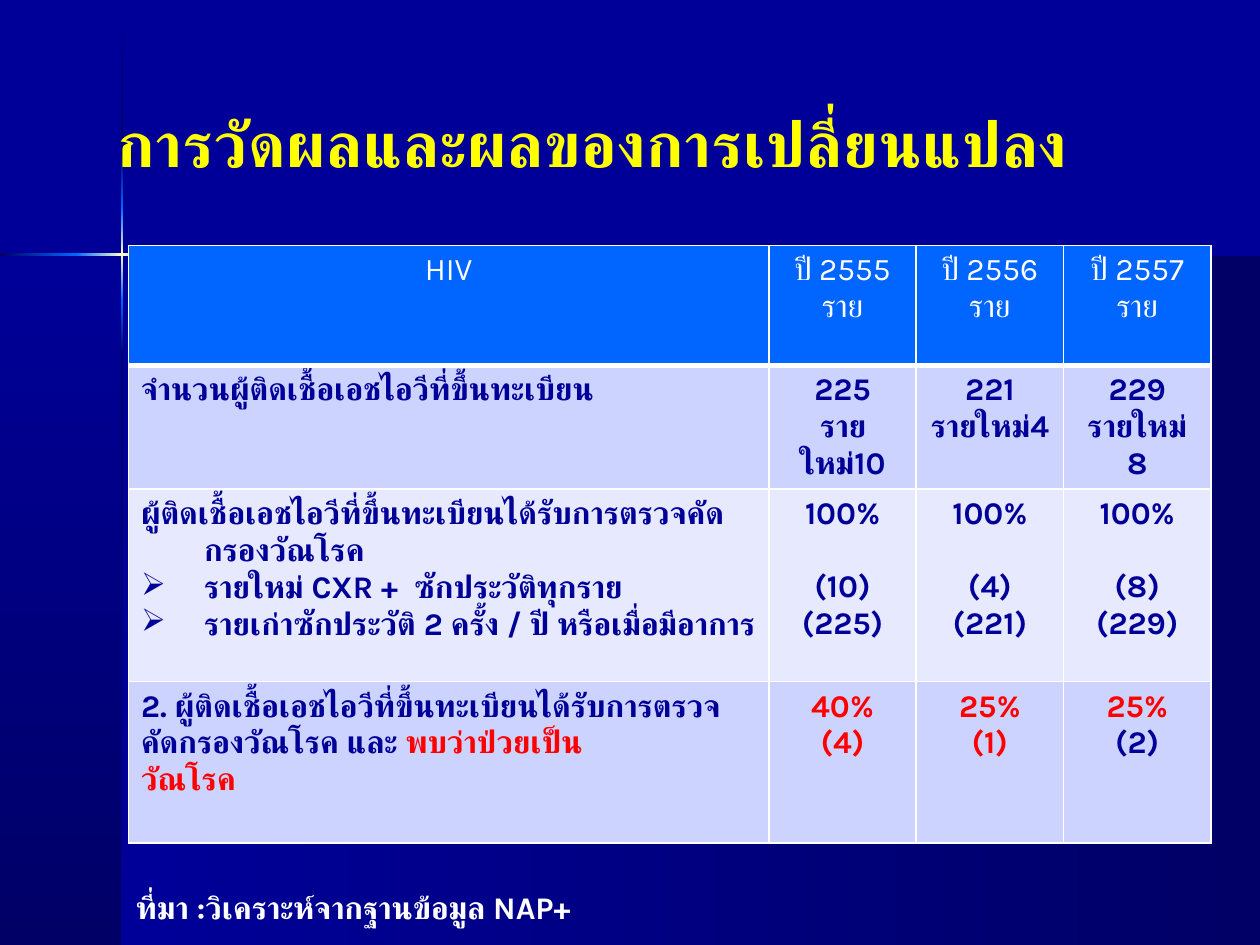
from copy import deepcopy
from dataclasses import dataclass

from lxml import etree
from pptx import Presentation
from pptx.dml.color import RGBColor
from pptx.enum import shapes, text
from pptx.oxml import ns
from pptx.util import Pt


@dataclass(frozen=True)
class Theme:
    font: str = "Karla"
    navy: str = "000099"
    dark: str = "000066"
    blue: str = "0066FF"
    glow: str = "FFFFCC"
    white: str = "FFFFFF"
    gold: str = "FFFF00"
    red: str = "FF0000"
    band: str = "CCD3FF"
    pale: str = "E7EAFF"
    big: int = 36
    base: int = 18


T = Theme()


@dataclass
class Para:
    text: str
    color: str = T.navy
    tail: str = ""  # red ending of the line
    hang: bool = False
    mark: str = ""
    after: float = 0


def rgb(code):
    return RGBColor.from_string(code)


def child(node, tag, **attrs):
    return etree.SubElement(node, ns.qn(tag), attrs)


def style(run, color, size=T.base, bold=True):
    """Set the font for both Latin and Thai letters."""
    font = run.font
    font.name, font.size, font.bold = T.font, Pt(size), bold
    font.color.rgb = rgb(color)
    child(run._r.get_or_add_rPr(), "a:cs", typeface=T.font)


def panel(slide, box, colors, down=False):
    """Draw a borderless box with evenly spaced gradient colours."""
    shape = slide.shapes.add_shape(shapes.MSO_SHAPE.RECTANGLE, *map(Pt, box))
    shape.shadow.inherit = False
    shape.line.fill.background()
    fill = shape.fill
    fill.gradient()
    fill.gradient_angle = 270 if down else 0
    stops = shape._element.spPr.find(".//" + ns.qn("a:gsLst"))
    for _ in colors[2:]:
        stops.append(deepcopy(stops[0]))
    for i, (stop, color) in enumerate(zip(fill.gradient_stops, colors)):
        stop.color.rgb = rgb(color)
        stop.position = i / (len(colors) - 1)


def backdrop(slide):
    fill = slide.background.fill
    fill.solid()
    fill.fore_color.rgb = rgb(T.navy)
    fade = [T.navy, T.dark]
    panel(slide, (70, 145.5, 650, 394.5), fade)
    panel(slide, (0, 145.5, 70, 394.5), fade, True)

    rise, fall = [T.dark, T.blue], [T.blue, T.dark]
    shine = [T.blue, T.glow, T.blue]
    beams = [(0.7, 87, fade), (203, 337, fade[::-1]), (171.4, 31.6, fall),
             (87, 31.8, rise), (118.8, 52.6, shine)]
    for top, high, colors in beams:
        panel(slide, (69.2, top, 1.4, high), colors, True)
    rays = [(127.4, 592.6, fade[::-1]), (0, 43.6, rise),
            (95.8, 31.6, fall), (43.4, 52.4, shine)]
    for left, wide, colors in rays:
        panel(slide, (left, 144.8, wide, 1.4), colors)


def heading(slide, words):
    title = slide.shapes.title
    title.left, title.top, title.width, title.height = map(Pt, (60, 56, 646, 51))
    title.text_frame.text = words
    para = title.text_frame.paragraphs[0]
    para.alignment = text.PP_ALIGN.LEFT
    style(para.runs[0], T.gold, T.big)
    para.runs[0]._r.get_or_add_rPr().set("spc", "50")
    slide.shapes._spTree.append(title._element)


def source(slide, words):
    box = slide.shapes.add_textbox(*map(Pt, (70.6, 504, 360, 29)))
    frame = box.text_frame
    frame.word_wrap = True
    frame.text = words
    style(frame.paragraphs[0].runs[0], T.white)


def border(cell, head):
    props = cell._tc.get_or_add_tcPr()
    for side in "LRTB":
        width = Pt(3 if head and side == "B" else 1)
        line = child(props, f"a:ln{side}", w=str(width))
        child(child(line, "a:solidFill"), "a:srgbClr", val=T.white)


def write(cell, paras, center, bold):
    frame = cell.text_frame
    frame.text = "\n".join(p.text for p in paras)
    for para, item in zip(frame.paragraphs, paras):
        if center:
            para.alignment = text.PP_ALIGN.CENTER
        if item.after:
            para.space_after = Pt(item.after)
        props = para._p.get_or_add_pPr()
        if item.hang:
            props.set("marL", str(Pt(36)))
            props.set("indent", str(Pt(-36)))
        if item.mark:
            child(props, "a:buChar", char=item.mark)
        for run in para.runs:
            style(run, item.color, bold=bold)
        if item.tail:
            run = para.add_run()
            run.text = item.tail
            style(run, T.red, bold=bold)


def grid(slide, rows):
    wide, high = [366, 84.2, 84.2, 84.2], [68.4, 68.4, 110.2, 92.2]
    frame = slide.shapes.add_table(len(rows), len(wide), Pt(73.4), Pt(140.4),
                                   Pt(sum(wide)), Pt(sum(high)))
    table = frame.table
    for col, size in zip(table.columns, wide):
        col.width = Pt(size)
    for row, size in zip(table.rows, high):
        row.height = Pt(size)
    fills = [T.blue, T.band, T.pale, T.band]
    for r, row in enumerate(rows):
        for c, paras in enumerate(row):
            cell = table.cell(r, c)
            border(cell, r == 0)
            cell.fill.solid()
            cell.fill.fore_color.rgb = rgb(fills[r])
            write(cell, paras, r == 0 or c > 0, r > 0)


def content():
    years = [[Para(f"ปี {year}", T.white), Para("ราย", T.white)]
             for year in (2555, 2556, 2557)]
    counts = [[Para(total), Para(fresh)] for total, fresh in
              [("225", "รายใหม่10"), ("221", "รายใหม่4"), ("229", "รายใหม่\v8")]]
    checks = [[Para("100%", after=21), Para(f"({fresh})"), Para(f"({total})")]
              for fresh, total in [(10, 225), (4, 221), (8, 229)]]
    found = [[Para(f"{rate}%", T.red), Para(f"({cases})", color)]
             for rate, cases, color in
             [(40, 4, T.red), (25, 1, T.red), (25, 2, T.navy)]]
    screen = [
        Para("ผู้ติดเชื้อเอชไอวีที่ขึ้นทะเบียนได้รับการตรวจคัดกรองวัณโรค", hang=True),
        Para("รายใหม่ CXR +  ซักประวัติทุกราย", hang=True, mark="➢"),
        Para("รายเก่าซักประวัติ 2 ครั้ง / ปี หรือเมื่อมีอาการ", hang=True, mark="➢"),
    ]
    ill = [
        Para("2. ผู้ติดเชื้อเอชไอวีที่ขึ้นทะเบียนได้รับการตรวจคัดกรองวัณโรค และ ",
             tail="พบว่าป่วยเป็น"),
        Para("วัณโรค", T.red),
    ]
    return [[[Para("HIV", T.white)], *years],
            [[Para("จำนวนผู้ติดเชื้อเอชไอวีที่ขึ้นทะเบียน")], *counts],
            [screen, *checks],
            [ill, *found]]


def main():
    deck = Presentation()
    deck.slide_width, deck.slide_height = Pt(720), Pt(540)
    slide = deck.slides.add_slide(deck.slide_layouts[5])
    backdrop(slide)
    grid(slide, content())
    heading(slide, "การวัดผลและผลของการเปลี่ยนแปลง")
    source(slide, "ที่มา :วิเคราะห์จากฐานข้อมูล NAP+")
    deck.save("out.pptx")


if __name__ == "__main__":
    main()
